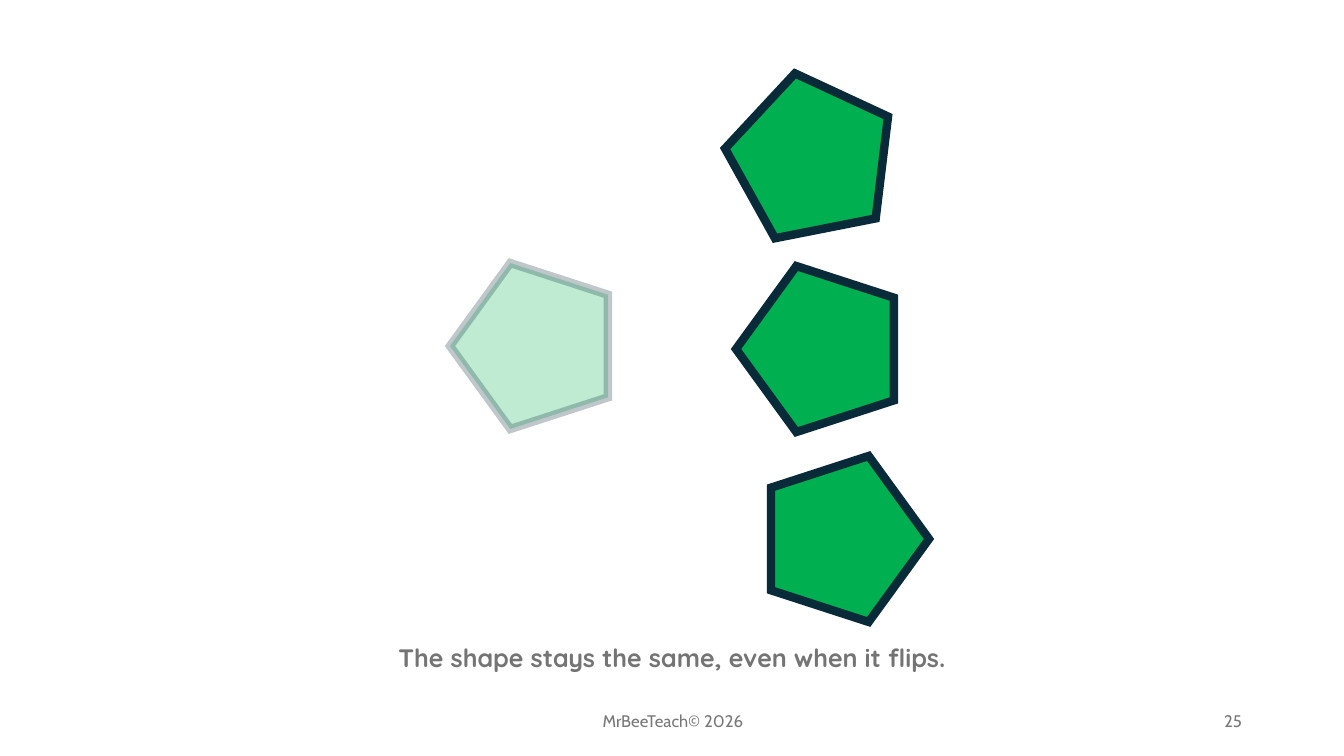
from lxml.etree import SubElement
from pptx import Presentation
from pptx.dml.color import RGBColor
from pptx.enum.shapes import MSO_SHAPE
from pptx.enum.text import MSO_ANCHOR, PP_ALIGN
from pptx.oxml.ns import qn
from pptx.util import Pt

GREEN = RGBColor(0x00, 0xB0, 0x50)
NAVY = RGBColor(0x09, 0x2A, 0x39)
GRAY = RGBColor(0x74, 0x74, 0x74)
PALE = RGBColor(0x79, 0x79, 0x79)

WIDE, HIGH = 1344, 756
SIDE, RISE = 166, 158
FOOT = 701

# left, top, turn in degrees, opacity in percent
PENTAGONS = [
    (446, 267, 270, 25),
    (767, 460, 90, 100),
    (736, 76, 60.9, 100),
    (732, 270, 270, 100),
]
CAPTION = "The shape stays the same, even when it flips."
FOOTER = "MrBeeTeach© 2026"
NUMBER = "25"


def px(count):
    return round(count * 914400 / 100.8)


def fade(fill, alpha):
    """Set the opacity of a solid fill, in percent."""
    color = fill._xPr.find(qn("a:solidFill"))[0]
    SubElement(color, qn("a:alpha")).set("val", str(alpha * 1000))


def add_text(slide, text, left, top, width, *, size=12, font="Cabin",
             color=PALE, bold=False, align=PP_ALIGN.CENTER,
             anchor=MSO_ANCHOR.MIDDLE):
    box = slide.shapes.add_textbox(px(left), px(top), px(width), px(40))
    frame = box.text_frame
    frame.word_wrap = True
    frame.vertical_anchor = anchor
    para = frame.paragraphs[0]
    para.alignment = align
    run = para.add_run()
    run.text = text
    run.font.name = font
    run.font.size = Pt(size)
    run.font.bold = bold
    run.font.color.rgb = color


def add_pentagon(slide, left, top, turn, alpha):
    shape = slide.shapes.add_shape(
        MSO_SHAPE.REGULAR_PENTAGON, px(left), px(top), px(SIDE), px(RISE))
    shape.shadow.inherit = False
    shape.rotation = turn
    shape.line.width = Pt(6)
    for fill, color in ((shape.fill, GREEN), (shape.line.fill, NAVY)):
        fill.solid()
        fill.fore_color.rgb = color
        if alpha < 100:
            fade(fill, alpha)
    edge = shape.line._get_or_add_ln()
    SubElement(edge, qn("a:miter")).set("lim", "800000")


def main():
    deck = Presentation()
    deck.slide_width, deck.slide_height = px(WIDE), px(HIGH)
    slide = deck.slides.add_slide(deck.slide_layouts[6])
    add_text(slide, FOOTER, 446, FOOT, 454)
    add_text(slide, NUMBER, 950, FOOT, 302, align=PP_ALIGN.RIGHT)
    add_text(slide, CAPTION, 336, 637, 672, size=18, font="Quicksand",
             color=GRAY, bold=True, anchor=MSO_ANCHOR.TOP)
    for item in PENTAGONS:
        add_pentagon(slide, *item)
    deck.save("out.pptx")


if __name__ == "__main__":
    main()
